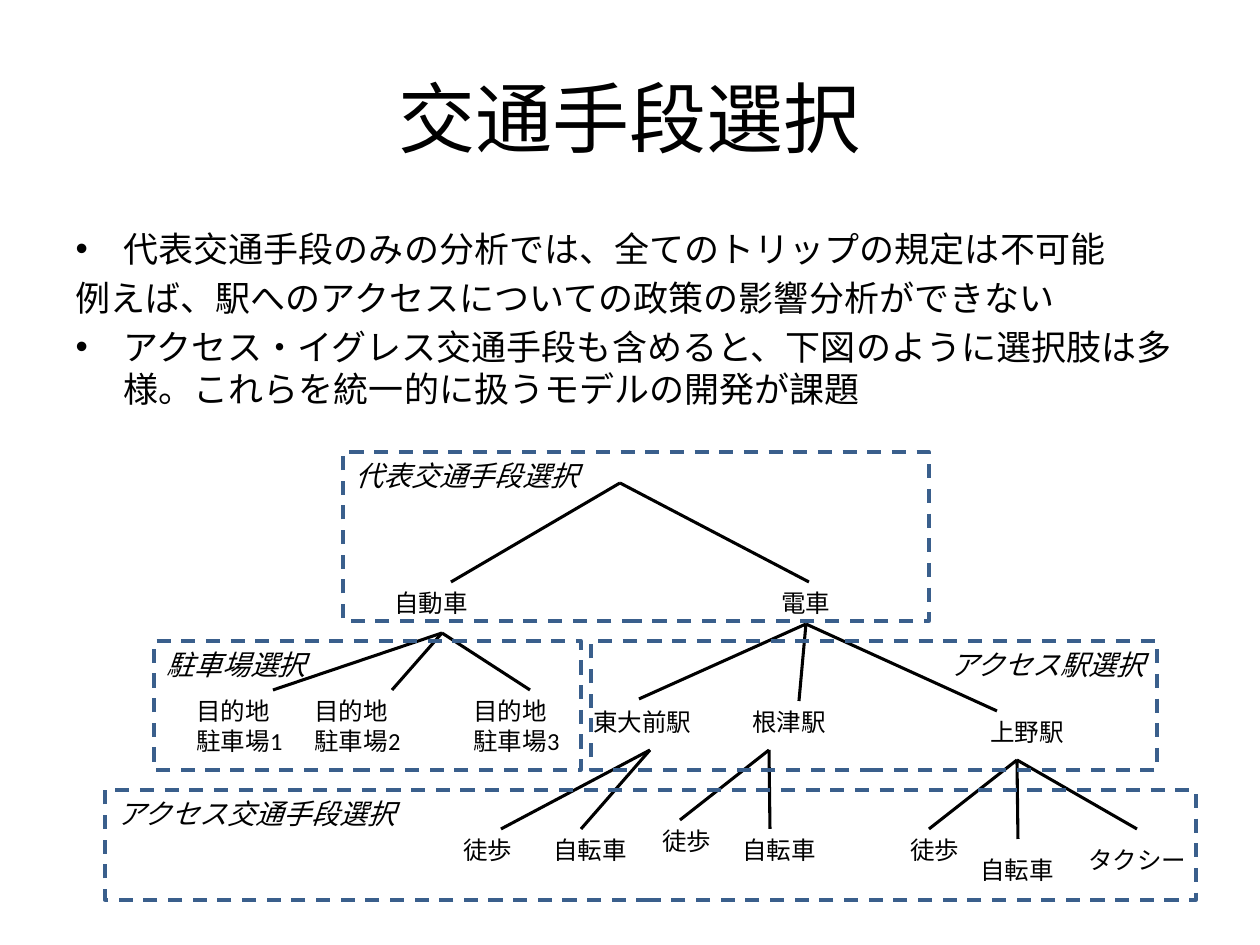
from dataclasses import dataclass

from lxml import etree
from pptx import Presentation
from pptx.dml.color import RGBColor
from pptx.enum.dml import MSO_LINE
from pptx.enum.shapes import MSO_CONNECTOR, MSO_SHAPE
from pptx.enum.text import MSO_ANCHOR, MSO_AUTO_SIZE, PP_ALIGN
from pptx.oxml.ns import qn
from pptx.util import Emu, Pt

STRAIGHT, RECTANGLE, DASH = MSO_CONNECTOR.STRAIGHT, MSO_SHAPE.RECTANGLE, MSO_LINE.DASH
TOP, MIDDLE = MSO_ANCHOR.TOP, MSO_ANCHOR.MIDDLE
LEFT, CENTER, RIGHT = PP_ALIGN.LEFT, PP_ALIGN.CENTER, PP_ALIGN.RIGHT
FIT_SHAPE, NO_FIT = MSO_AUTO_SIZE.SHAPE_TO_FIT_TEXT, MSO_AUTO_SIZE.NONE

PX_PER_INCH = 126
FONT = "Calibri"
BLACK, BLUE = "000000", "3A5F8C"
LINE_HEIGHT, TWO_LINE_HEIGHT = 43, 72
BODY_INDENT = 48


@dataclass(frozen=True)
class Fork:
    """A choice point and the ends of its branches."""
    origin: tuple[int, int]
    ends: tuple[tuple[int, int], ...]


@dataclass(frozen=True)
class Option:
    text: str
    left: int
    top: int
    width: int
    height: int = LINE_HEIGHT
    wrap: bool = True


@dataclass(frozen=True)
class Stage:
    """A dashed frame around one level of choice."""
    text: str
    box: tuple[int, int, int, int]
    align: PP_ALIGN = LEFT


FORKS = [
    Fork((620, 483), ((809, 582), (451, 582))),
    Fork((442, 633), ((273, 690), (392, 690), (530, 690))),
    Fork((806, 624), ((639, 699), (799, 701), (997, 711))),
    Fork((650, 750), ((501, 829), (581, 829))),
    Fork((769, 750), ((680, 820), (770, 829))),
    Fork((1017, 760), ((929, 829), (1018, 839), (1137, 829))),
]
PARKING_LEFTS = (184, 302, 461)
WALK_PLACES = ((451, 829), (650, 820), (898, 829))
BICYCLE_PLACES = ((541, 829), (730, 829), (968, 849))
OPTIONS = [
    Option("自動車", 382, 582, 100, wrap=False),
    Option("電車", 769, 582, 74, wrap=False),
    *(Option(f"目的地\n駐車場{number}", left, 690, 118, TWO_LINE_HEIGHT)
      for number, left in enumerate(PARKING_LEFTS, 1)),
    Option("東大前駅", 581, 701, 139),
    Option("根津駅", 740, 701, 118),
    Option("上野駅", 978, 711, 139),
    *(Option("徒歩", left, top, 89) for left, top in WALK_PLACES),
    *(Option("自転車", left, top, 100) for left, top in BICYCLE_PLACES),
    Option("タクシー", 1076, 839, 129),
]
STAGES = [
    Stage("代表交通手段選択", (343, 452, 586, 169)),
    Stage("駐車場選択", (154, 641, 427, 129)),
    Stage("アクセス駅選択", (591, 641, 566, 129), RIGHT),
    Stage("アクセス交通手段選択", (105, 790, 1091, 110)),
]
POINTS = [
    ("代表交通手段のみの分析では、全てのトリップの規定は不可能", True),
    ("例えば、駅へのアクセスについての政策の影響分析ができない", False),
    ("アクセス・イグレス交通手段も含めると、下図のように選択肢は多様。"
     "これらを統一的に扱うモデルの開発が課題", True),
]


def px(length: int) -> Emu:
    return Emu(round(length * 914400 / PX_PER_INCH))


def color(hex_value: str) -> RGBColor:
    return RGBColor.from_string(hex_value)


def apply(target, values: dict) -> None:
    for attribute, value in values.items():
        setattr(target, attribute, value)


def place(shape, left: int, top: int, width: int, height: int) -> None:
    apply(shape, {"left": px(left), "top": px(top),
                  "width": px(width), "height": px(height)})


def write(shape, text: str, size: int, frame_format: dict,
          align: PP_ALIGN = LEFT, italic: bool = False) -> None:
    frame = shape.text_frame
    frame.text = text
    apply(frame, frame_format)
    for paragraph in frame.paragraphs:
        paragraph.alignment = align
        for run in paragraph.runs:
            apply(run.font, {"name": FONT, "size": Pt(size), "italic": italic})
            run.font.color.rgb = color(BLACK)


def draw_fork(slide, fork: Fork) -> None:
    for end in fork.ends:
        branch = slide.shapes.add_connector(
            STRAIGHT, *map(px, fork.origin), *map(px, end))
        branch.line.color.rgb = color(BLACK)
        branch.line.width = Pt(1.75)
        etree.SubElement(branch._element.spPr, qn("a:effectLst"))


def draw_option(slide, option: Option) -> None:
    label = slide.shapes.add_textbox(
        *map(px, (option.left, option.top, option.width, option.height)))
    write(label, option.text, 14, {"word_wrap": option.wrap, "auto_size": FIT_SHAPE})


def draw_stage(slide, stage: Stage) -> None:
    frame = slide.shapes.add_shape(RECTANGLE, *map(px, stage.box))
    frame.shadow.inherit = False
    frame.fill.background()
    frame.line.color.rgb = color(BLUE)
    apply(frame.line, {"width": Pt(2), "dash_style": DASH})
    write(frame, stage.text, 16, {"word_wrap": True, "vertical_anchor": TOP},
          stage.align, italic=True)


def fill_body(body) -> None:
    place(body, 63, 221, 1134, 624)
    write(body, "\n".join(text for text, _ in POINTS), 20,
          {"auto_size": NO_FIT, "vertical_anchor": TOP})
    for paragraph, (_, bulleted) in zip(body.text_frame.paragraphs, POINTS):
        properties = paragraph._p.get_or_add_pPr()
        properties.set("marL", str(px(BODY_INDENT)))
        properties.set("indent", str(-px(BODY_INDENT)))
        if bulleted:
            etree.SubElement(properties, qn("a:buFont"), typeface="Arial")
            etree.SubElement(properties, qn("a:buChar"), char="•")
        else:
            etree.SubElement(properties, qn("a:buNone"))


def main() -> None:
    presentation = Presentation()
    apply(presentation, {"slide_width": px(1260), "slide_height": px(945)})
    slide = presentation.slides.add_slide(presentation.slide_layouts[1])
    title, body = slide.placeholders
    place(title, 63, 38, 1134, 157)
    write(title, "交通手段選択", 44, {"vertical_anchor": MIDDLE}, CENTER)
    fill_body(body)
    for fork in FORKS:
        draw_fork(slide, fork)
    for option in OPTIONS:
        draw_option(slide, option)
    for stage in STAGES:
        draw_stage(slide, stage)
    presentation.save("out.pptx")


if __name__ == "__main__":
    main()
